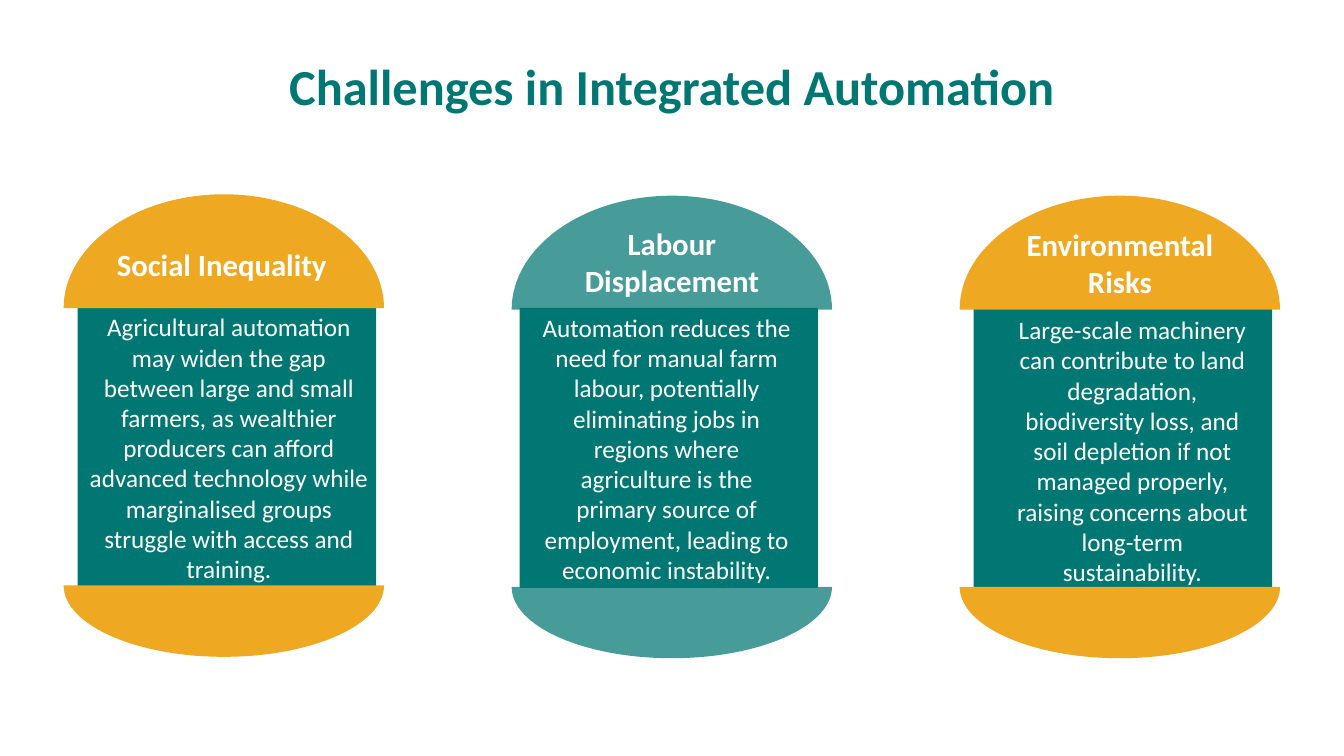
import lxml.etree
import pptx
import pptx.dml.color
import pptx.enum.shapes
import pptx.enum.text
import pptx.oxml.ns
import pptx.util

Pt = pptx.util.Pt
RGBColor = pptx.dml.color.RGBColor
qualified = pptx.oxml.ns.qn

TEAL = RGBColor(0x00, 0x77, 0x72)
AMBER = RGBColor(0xEE, 0xA8, 0x21)
WHITE = RGBColor(0xFF, 0xFF, 0xFF)

COLUMN_LEFT = 45.5
COLUMN_PITCH = 320
COLUMN_WIDTH = 228.8
PANEL_WIDTH = 213.2
PANEL_HEIGHT = 200
PANEL_OFFSET = 80.2
CAP_HEIGHT = 81.3
BASE_OFFSET = 279.4
BASE_HEIGHT = 51
CURVE = 0.55

CHALLENGES = [
    {
        "top": 138.8, "colour": AMBER, "opacity": 100, "panel": 10,
        "heading": "Social Inequality",
        "heading_box": (2.4, 33.4, 221, 34),
        "text": "Agricultural automation may widen the gap between large and small "
                "farmers, as wealthier producers can afford advanced technology while "
                "marginalised groups struggle with access and training.",
        "text_box": (11.5, 80.2, 213, 204),
    },
    {
        "top": 139.8, "colour": TEAL, "opacity": 72, "panel": 5.6,
        "heading": "Labour Displacement",
        "heading_box": (19.7, 17.3, 189.5, 60.5),
        "text": "Automation reduces the need for manual farm labour, potentially "
                "eliminating jobs in regions where agriculture is the primary source "
                "of employment, leading to economic instability.",
        "text_box": (12.7, 79.7, 196, 204),
    },
    {
        "top": 139.8, "colour": AMBER, "opacity": 100, "panel": 10,
        "heading": "Environmental Risks",
        "heading_box": (18.7, 18, 191.5, 60.5),
        "text": "Large-scale machinery can contribute to land degradation, "
                "biodiversity loss, and soil depletion if not managed properly, "
                "raising concerns about long-term sustainability.",
        "text_box": (31.9, 81.3, 183, 204),
    },
]


def paint(shape, colour, opacity=100):
    shape.shadow.inherit = False
    shape.line.fill.background()
    shape.fill.solid()
    shape.fill.fore_color.rgb = colour
    if opacity < 100:
        colour_element = shape.element.spPr.find(".//" + qualified("a:srgbClr"))
        alpha = lxml.etree.SubElement(colour_element, qualified("a:alpha"))
        alpha.set("val", str(opacity * 1000))


def write(paragraph, text, size, colour, bold=False):
    paragraph.alignment = pptx.enum.text.PP_ALIGN.CENTER
    run = paragraph.add_run()
    run.text = text
    run.font.name = "Calibri"
    run.font.size = Pt(size)
    run.font.bold = bold
    run.font.color.rgb = colour


def add_label(slide, left, top, width, height, text, size, bold=False):
    box = slide.shapes.add_textbox(Pt(left), Pt(top), Pt(width), Pt(height))
    box.text_frame.word_wrap = True
    box.text_frame.auto_size = pptx.enum.text.MSO_AUTO_SIZE.SHAPE_TO_FIT_TEXT
    write(box.text_frame.paragraphs[0], text, size, WHITE, bold)


def curve_segments(shape):
    segments = list(shape.element.iter(qualified("a:lnTo")))
    for start in range(0, len(segments), 3):
        curve = lxml.etree.Element(qualified("a:cubicBezTo"))
        segments[start].addprevious(curve)
        for segment in segments[start:start + 3]:
            curve.append(segment[0])
            segment.getparent().remove(segment)


def add_half_ellipse(slide, left, flat_side, width, rise, colour, opacity):
    radius = width / 2
    outline = [(-1, 0), (-1, CURVE), (-CURVE, 1), (0, 1), (CURVE, 1), (1, CURVE), (1, 0)]
    points = [(Pt(left + radius + radius * across), Pt(flat_side - rise * up))
              for across, up in outline]
    builder = slide.shapes.build_freeform(*points[0])
    builder.add_line_segments(points[1:], close=True)
    shape = builder.convert_to_shape()
    curve_segments(shape)
    paint(shape, colour, opacity)


def add_title(slide, left, top, width, height):
    title = slide.shapes.title
    title.left, title.top = Pt(left), Pt(top)
    title.width, title.height = Pt(width), Pt(height)
    title.text_frame.word_wrap = True
    title.text_frame.vertical_anchor = pptx.enum.text.MSO_ANCHOR.TOP
    paragraph = title.text_frame.paragraphs[0]
    paragraph.line_spacing = 1.15
    paragraph.space_before = Pt(0)
    paragraph.space_after = Pt(8)
    write(paragraph, "Challenges in Integrated Automation", 36, TEAL, True)


def add_challenge(slide, left, top, width, challenge):
    panel = slide.shapes.add_shape(
        pptx.enum.shapes.MSO_SHAPE.RECTANGLE,
        Pt(left + challenge["panel"]), Pt(top + PANEL_OFFSET),
        Pt(PANEL_WIDTH), Pt(PANEL_HEIGHT))
    paint(panel, TEAL)
    for flat_side, rise in ((CAP_HEIGHT, CAP_HEIGHT), (BASE_OFFSET, -BASE_HEIGHT)):
        add_half_ellipse(slide, left, top + flat_side, width, rise,
                         challenge["colour"], challenge["opacity"])
    for part, size, bold in (("heading", 22, True), ("text", 18, False)):
        inset, drop, label_width, label_height = challenge[part + "_box"]
        add_label(slide, left + inset, top + drop, label_width, label_height,
                  challenge[part], size, bold)


def main():
    presentation = pptx.Presentation()
    presentation.slide_width = Pt(960)
    presentation.slide_height = Pt(540)
    slide = presentation.slides.add_slide(presentation.slide_layouts[5])
    add_title(slide, 0, 29.5, 960, 64)
    for index, challenge in enumerate(CHALLENGES):
        add_challenge(slide, COLUMN_LEFT + index * COLUMN_PITCH, challenge["top"],
                      COLUMN_WIDTH, challenge)
    presentation.save("out.pptx")


if __name__ == "__main__":
    main()
